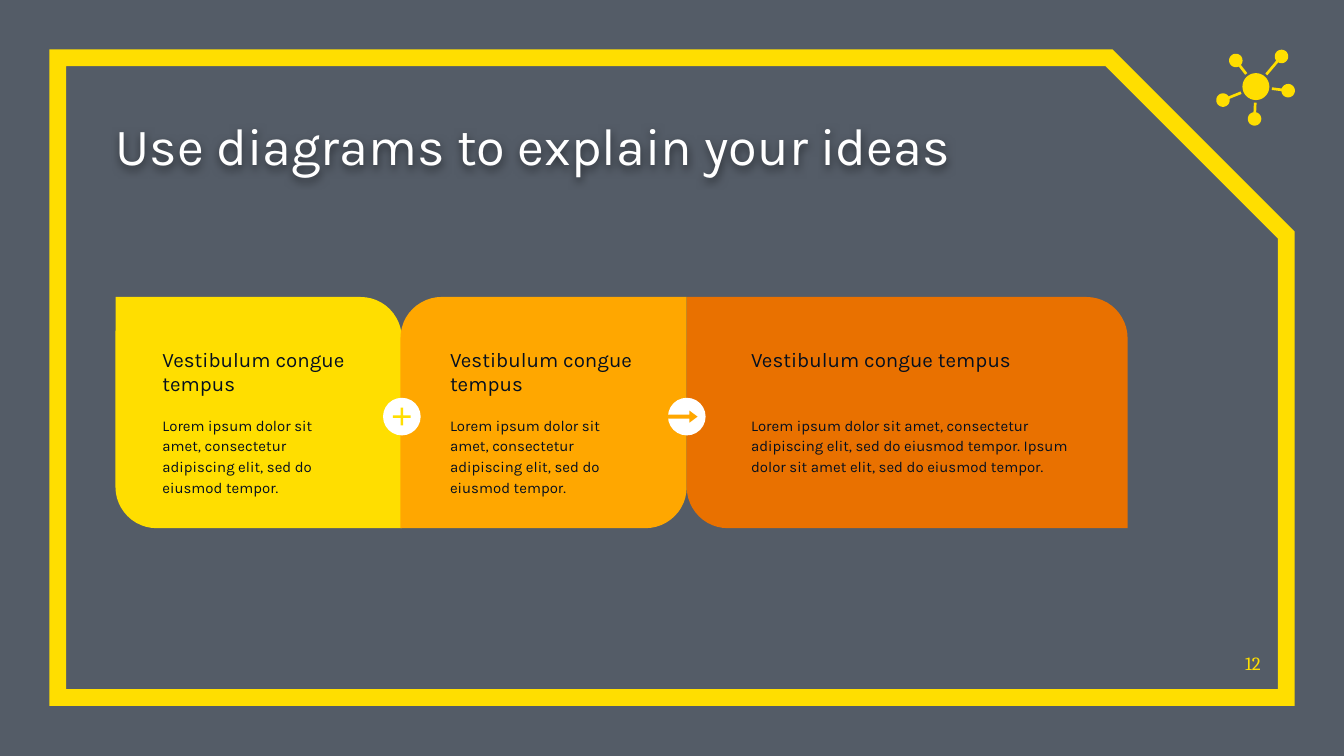
import math

from lxml import etree
from pptx import Presentation
from pptx.dml.color import RGBColor
from pptx.enum.shapes import MSO_SHAPE
from pptx.enum.text import MSO_ANCHOR, MSO_AUTO_SIZE, PP_ALIGN
from pptx.oxml import parse_xml
from pptx.oxml.ns import nsdecls, qn
from pptx.util import Inches, Pt

OVAL, CARD, FRAME = MSO_SHAPE.OVAL, MSO_SHAPE.ROUND_2_DIAG_RECTANGLE, MSO_SHAPE.SNIP_1_RECTANGLE
ARROW, PLUS = MSO_SHAPE.RIGHT_ARROW, MSO_SHAPE.MATH_PLUS
TOP, BOTTOM = MSO_ANCHOR.TOP, MSO_ANCHOR.BOTTOM
LEFT, RIGHT = PP_ALIGN.LEFT, PP_ALIGN.RIGHT

SLATE = RGBColor(0x54, 0x5C, 0x67)
NAVY = RGBColor(0x04, 0x0F, 0x20)
WHITE = RGBColor(0xFF, 0xFF, 0xFF)
YELLOW = RGBColor(0xFF, 0xDE, 0x00)
AMBER = RGBColor(0xFF, 0xA7, 0x00)
ORANGE = RGBColor(0xE9, 0x71, 0x00)

TITLE = "Use diagrams to explain your ideas"
PAGE = "12"
HEADING = "Vestibulum congue tempus"
LOREM = "Lorem ipsum dolor sit amet, consectetur adipiscing elit, sed do eiusmod tempor."

# left, width, fill, corner adjustments, text left, text width, body
CARDS = [
    (0.86, 2.13, YELLOW, (0, 0.178), 1.11, 1.59, LOREM),
    (2.98, 2.13, AMBER, (0.178, 0), 3.25, 1.59, LOREM),
    (5.11, 3.28, ORANGE, (0, 0.178), 5.49, 2.64,
     LOREM + " Ipsum dolor sit amet elit, sed do eiusmod tempor."),
]
# badge left, symbol, fill, adjustments, symbol offset, width, height
BADGES = [
    (4.97, ARROW, AMBER, (0.32, 0.67), 0, 0.22, 0.09),
    (2.85, PLUS, YELLOW, (0.099,), 0.05, 0.18, 0.18),
]
CARD_TOP, CARD_H = 2.21, 1.72
BADGE, BADGE_TOP = 0.28, 2.96

HUB, HUB_R, NODE_R = (9.345, 0.645), 0.1, 0.05
SPOKE_START, SPOKE_W = 0.12, 0.02
NODES = [(9.535, 0.42), (9.195, 0.45), (9.1, 0.745), (9.335, 0.885), (9.585, 0.675)]
ARC_STEPS = 48

HEADING_FONT = {"size": Pt(11), "name": "Karla"}
BODY_FONT = {"size": Pt(8), "name": "Karla"}
TITLE_FONT = {"size": Pt(28), "name": "Karla"}
PAGE_FONT = {"size": Pt(10), "name": "Cambria"}
BODY_FORMAT = {"line_spacing": 1.15, "space_after": Pt(16)}


def paint(sp, fill):
    sp.shadow.inherit = False
    sp.fill.solid()
    sp.fill.fore_color.rgb = fill
    sp.line.fill.background()


def add_shape(shapes, kind, x, y, w, h, fill, adjustments=()):
    sp = shapes.add_shape(kind, Inches(x), Inches(y), Inches(w), Inches(h))
    for i, value in enumerate(adjustments):
        sp.adjustments[i] = value
    paint(sp, fill)
    return sp


def set_text(sp, text, font, color, inset=0, anchor=TOP, align=LEFT, paragraph=None):
    tf = sp.text_frame
    tf.word_wrap, tf.auto_size, tf.vertical_anchor = True, MSO_AUTO_SIZE.NONE, anchor
    for side in ("left", "top", "right", "bottom"):
        setattr(tf, f"margin_{side}", Inches(inset))
    p = tf.paragraphs[0]
    p.alignment = align
    for key, value in (paragraph or {}).items():
        setattr(p, key, value)
    r = p.add_run()
    r.text = text
    r.font.color.rgb = color
    for key, value in font.items():
        setattr(r.font, key, value)


def add_text(shapes, x, y, w, h, *args, **kwargs):
    sp = shapes.add_textbox(Inches(x), Inches(y), Inches(w), Inches(h))
    set_text(sp, *args, **kwargs)


def add_title(slide):
    sp = slide.shapes.title
    sp.left, sp.top, sp.width, sp.height = (Inches(v) for v in (0.86, 0.78, 7.35, 0.53))
    set_text(sp, TITLE, TITLE_FONT, WHITE, anchor=BOTTOM)
    sp._element.spPr.append(parse_xml(
        f'<a:effectLst {nsdecls("a")}><a:outerShdw blurRad="57150" dist="19050" dir="5400000">'
        '<a:srgbClr val="000000"><a:alpha val="50000"/></a:srgbClr></a:outerShdw></a:effectLst>'))


def add_frame(shapes):
    sp = add_shape(shapes, FRAME, 0.43, 0.43, 9.14, 4.76, YELLOW, (0.277,))
    sp.fill.background()
    sp.line.color.rgb = YELLOW
    sp.line.width = Pt(9)
    etree.SubElement(sp.line._get_or_add_ln(), qn("a:miter"), lim="800000")


def add_outline(shapes, points):
    points = [(Inches(x), Inches(y)) for x, y in points]
    builder = shapes.build_freeform(*points[0])
    builder.add_line_segments(points[1:])
    paint(builder.convert_to_shape(), YELLOW)


def arc(center, radius, start, sweep):
    angles = (start + sweep * i / ARC_STEPS for i in range(ARC_STEPS + 1))
    return [(center[0] + radius * math.cos(a), center[1] + radius * math.sin(a)) for a in angles]


def add_network_icon(slide):
    """Draw a hub and, around it, nodes that each carry a spoke towards the hub."""
    shapes = slide.shapes.add_group_shape().shapes
    for node in NODES:
        angle = math.atan2(HUB[1] - node[1], HUB[0] - node[0])
        notch = math.asin(SPOKE_W / 2 / NODE_R)
        half = math.asin(SPOKE_W / 2 / SPOKE_START)
        spoke_end = arc(HUB, SPOKE_START, angle + math.pi + half, -2 * half)
        rim = arc(node, NODE_R, angle + notch, 2 * (math.pi - notch))
        add_outline(shapes, rim + spoke_end[::ARC_STEPS])
    add_outline(shapes, arc(HUB, HUB_R, 0, 2 * math.pi))


def add_process(shapes):
    for x, width, fill, corners, text_x, text_w, body in CARDS:
        add_shape(shapes, CARD, x, CARD_TOP, width, CARD_H, fill, corners)
        add_text(shapes, text_x, 2.48, text_w, 0.5, HEADING, HEADING_FONT, NAVY, inset=0.1)
        add_text(shapes, text_x, 2.98, text_w, 0.56, body, BODY_FONT, NAVY, inset=0.1,
                 paragraph=BODY_FORMAT)
    for x, symbol, fill, adjustments, offset, w, h in BADGES:
        add_shape(shapes, OVAL, x, BADGE_TOP, BADGE, BADGE, WHITE)
        add_shape(shapes, symbol, x + offset, BADGE_TOP + (BADGE - h) / 2, w, h,
                  fill, adjustments)


def main():
    prs = Presentation()
    prs.slide_width = Inches(10)
    prs.slide_height = prs.slide_width * 9 // 16
    slide = prs.slides.add_slide(prs.slide_layouts[5])
    slide.background.fill.solid()
    slide.background.fill.fore_color.rgb = SLATE

    add_frame(slide.shapes)
    add_title(slide)
    add_text(slide.shapes, 9.11, 4.74, 0.27, 0.28, PAGE, PAGE_FONT, YELLOW,
             anchor=BOTTOM, align=RIGHT)
    add_network_icon(slide)
    add_process(slide.shapes)
    prs.save("out.pptx")


if __name__ == "__main__":
    main()
